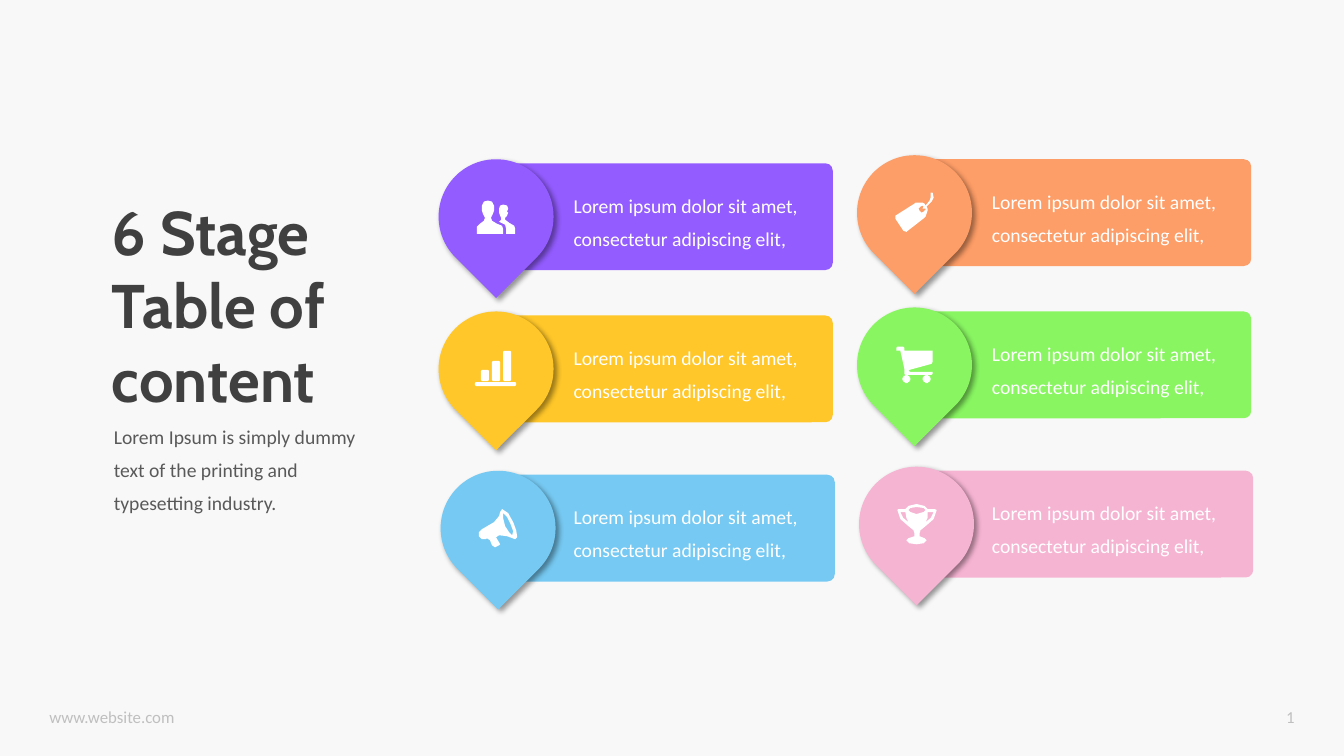
"""Build a six-stage table of contents slide with pin-shaped markers."""
import math

from lxml import etree
from pptx import Presentation
from pptx import util as u
from pptx.dml.color import RGBColor
from pptx.enum import shapes, text
from pptx.oxml.ns import qn

THEME = {
    "background": "F8F8F8", "white": "FFFFFF", "title": "404040", "body": "595959",
    "footer": "BFBFBF", "shadow": "000000", "title_font": "Cabin", "body_font": "Calibri",
    "title_size": 44, "body_size": 14, "footer_size": 12, "body_spacing": 1.4,
}
CARD_TEXT = "Lorem ipsum dolor sit amet, consectetur adipiscing elit,"


def bar_outline(left, top, right, bottom):
    """Return a bar with softened corners."""
    return [(left + 1, top), (right - 1, top), (right, top + 1), (right, bottom - 1),
            (right - 1, bottom), (left + 1, bottom), (left, bottom - 1), (left, top + 1)]


def wheel_outline(center_x, center_y, radius):
    """Return a circle as a 24-sided outline."""
    angles = [math.radians(15 * step) for step in range(24)]
    return [(round(center_x + radius * math.cos(a), 2), round(center_y + radius * math.sin(a), 2))
            for a in angles]


PEOPLE = [
    [(38, 33), (38, 28), (37, 25), (32, 22), (28, 19), (28, 17), (30, 15), (31, 12), (30, 11),
     (31, 8), (30, 5), (26, 4), (23, 5), (22, 8), (22, 12), (23, 15), (24, 17), (24, 19),
     (22, 21), (28, 24), (29, 28), (29, 33)],
    [(20, 23), (15, 20), (14, 17), (16, 13), (17, 10), (17, 5), (15, 1), (11, 0), (7, 1),
     (5, 5), (5, 10), (6, 13), (8, 17), (7, 20), (3, 23), (0, 26), (0, 33), (26, 33),
     (26, 28), (25, 25)],
]
TAG = [
    [(37, 0), (35, 0), (35, 1), (35, 5), (34, 8), (30, 13), (29, 11), (27, 10), (20, 10),
     (19, 11), (0, 23), (0, 26), (8, 38), (11, 39), (29, 25), (30, 24), (32, 18), (32, 16),
     (31, 14), (36, 9), (38, 5)],
    [(28, 19), (26, 20), (24, 18), (23, 16), (25, 14), (27, 13), (28, 14), (27, 16),
     (28, 16), (30, 16), (30, 17)],
]
CHART = [bar_outline(0, 31, 41, 35), bar_outline(28, 0, 36, 30),
         bar_outline(17, 10, 25, 30), bar_outline(6, 19, 14, 30)]
CART = [
    wheel_outline(10, 32, 4), wheel_outline(30, 32, 4),
    [(13, 23), (35, 17), (36, 15), (36, 4), (8, 4), (8, 1), (7, 0), (1, 0), (0, 1), (0, 4),
     (4, 4), (8, 22), (8, 27), (9, 28), (35, 28), (36, 27), (36, 25), (14, 25), (12, 24)],
]
MEGAPHONE = [
    [(34, 14), (29, 5), (23, 1), (21, 4), (20, 8), (15, 14), (3, 21), (0, 24), (0, 28),
     (3, 31), (7, 31), (8, 30), (11, 32), (13, 37), (16, 39), (20, 37), (21, 36), (20, 34),
     (17, 29), (20, 27), (28, 28), (36, 31), (38, 29), (37, 22)],
    [(33, 27), (30, 24), (26, 18), (24, 10), (24, 5), (28, 9), (31, 15), (34, 23)],
]
TROPHY = [
    [(22, 29), (23, 26), (28, 22), (36, 15), (39, 6), (37, 5), (30, 5), (27, 2), (19, 0),
     (11, 2), (8, 5), (1, 5), (0, 6), (3, 15), (11, 22), (16, 26), (17, 29), (17, 32),
     (11, 34), (9, 36), (12, 39), (19, 40), (26, 39), (29, 36), (27, 34), (22, 32)],
    [(28, 18), (30, 14), (30, 8), (36, 8), (33, 14)],
    [(19, 3), (26, 4), (28, 6), (26, 8), (19, 10), (13, 8), (11, 6), (13, 4)],
    [(3, 8), (8, 8), (9, 14), (11, 18), (6, 14)],
]

CARDS = [
    ("935CFF", PEOPLE, (0.38, 0.41)), ("FD9D67", TAG, (0.38, 0.37)),
    ("FFC729", CHART, (0.36, 0.39)), ("88F561", CART, (0.39, 0.39)),
    ("76C9F2", MEGAPHONE, (0.38, 0.37)), ("F6B4D3", TROPHY, (0.38, 0.37)),
]
COLUMNS = [(4.35, 5.59, 0), (8.5, 9.74, -0.04)]
ROWS = [(1.58, 0), (3.09, 0), (4.67, 0.02)]

LABELS = [
    ("www.website.com", (0.39, 6.96, 2.45, 0.3), "footer", {}),
    ("1", (12.03, 6.96, 0.91, 0.3), "footer", {"alignment": text.PP_ALIGN.RIGHT}),
    ("6 Stage Table of content", (1.01, 1.87, 3.07, 2.32), "title", {}),
    ("Lorem Ipsum is simply dummy text of the printing and typesetting industry.",
     (1.03, 4.07, 2.81, 1.06), "body", {"line_spacing": THEME["body_spacing"]}),
]


def inches(values):
    """Convert numbers to lengths."""
    return [u.Inches(value) for value in values]


def apply_format(target, values):
    """Set each attribute in a dict of format values."""
    for name, value in values.items():
        setattr(target, name, value)


def add_label(slide, wording, box, role, layout, color=None):
    """Add a wrapping text box in one of the theme's text roles."""
    frame = slide.shapes.add_textbox(*inches(box)).text_frame
    apply_format(frame, {"word_wrap": True, "auto_size": text.MSO_AUTO_SIZE.SHAPE_TO_FIT_TEXT})
    paragraph = frame.paragraphs[0]
    apply_format(paragraph, layout)
    run = paragraph.add_run()
    run.text = wording
    font_name = THEME["title_font"] if role == "title" else THEME["body_font"]
    apply_format(run.font, {"name": font_name, "size": u.Pt(THEME[role + "_size"]),
                            "bold": role == "title"})
    run.font.color.rgb = RGBColor.from_string(color or THEME[role])


def paint(shape, color):
    """Give a shape a plain fill without line or shadow."""
    shape.shadow.inherit = False
    shape.fill.solid()
    shape.fill.fore_color.rgb = RGBColor.from_string(color)
    shape.line.fill.background()


def add_shadow(shape):
    """Cast a soft shadow to the lower right."""
    effects = shape._element.spPr.find(qn("a:effectLst"))
    shadow = etree.SubElement(effects, qn("a:outerShdw"), {
        "blurRad": str(u.Pt(4)), "dist": str(u.Pt(3)), "dir": "2700000",
        "algn": "tl", "rotWithShape": "0"})
    color = etree.SubElement(shadow, qn("a:srgbClr"), val=THEME["shadow"])
    etree.SubElement(color, qn("a:alpha"), val="40000")


def add_icon(slide, outlines, left, top):
    """Draw outlines given in hundredths of an inch as one white shape."""
    builder = slide.shapes.build_freeform(*outlines[0][0], scale=float(u.Inches(0.01)))
    for index, outline in enumerate(outlines):
        if index:
            builder.move_to(*outline[0])
        builder.add_line_segments(outline[1:], close=True)
    paint(builder.convert_to_shape(u.Inches(left), u.Inches(top)), THEME["white"])


def add_card(slide, card, column, row):
    """Add a bar, its pin, text and icon."""
    color, icon, (icon_x, icon_y) = card
    column_left, text_left, lift = column
    row_top, shift = row
    left, top = column_left + shift, row_top + lift
    bar = slide.shapes.add_shape(shapes.MSO_SHAPE.ROUNDED_RECTANGLE,
                                 *inches((left + 0.34, top + 0.04, 3.57, 1.06)))
    bar.adjustments[0] = 0.07
    paint(bar, color)
    pin = slide.shapes.add_shape(shapes.MSO_SHAPE.TEAR, *inches((left, top, 1.14, 1.14)))
    pin.rotation = 135
    paint(pin, color)
    add_shadow(pin)
    add_label(slide, CARD_TEXT, (text_left, top + 0.2, 2.68, 0.73), "body",
              {"line_spacing": THEME["body_spacing"]}, THEME["white"])
    add_icon(slide, icon, left + icon_x, top + icon_y)


def main():
    """Build and save the slide."""
    presentation = Presentation()
    apply_format(presentation, {"slide_width": u.Inches(13.33), "slide_height": u.Inches(7.5)})
    slide = presentation.slides.add_slide(presentation.slide_layouts[6])
    slide.background.fill.solid()
    slide.background.fill.fore_color.rgb = RGBColor.from_string(THEME["background"])
    for index, card in enumerate(CARDS):
        add_card(slide, card, COLUMNS[index % 2], ROWS[index // 2])
    for label in LABELS:
        add_label(slide, *label)
    presentation.save("out.pptx")


if __name__ == "__main__":
    main()
